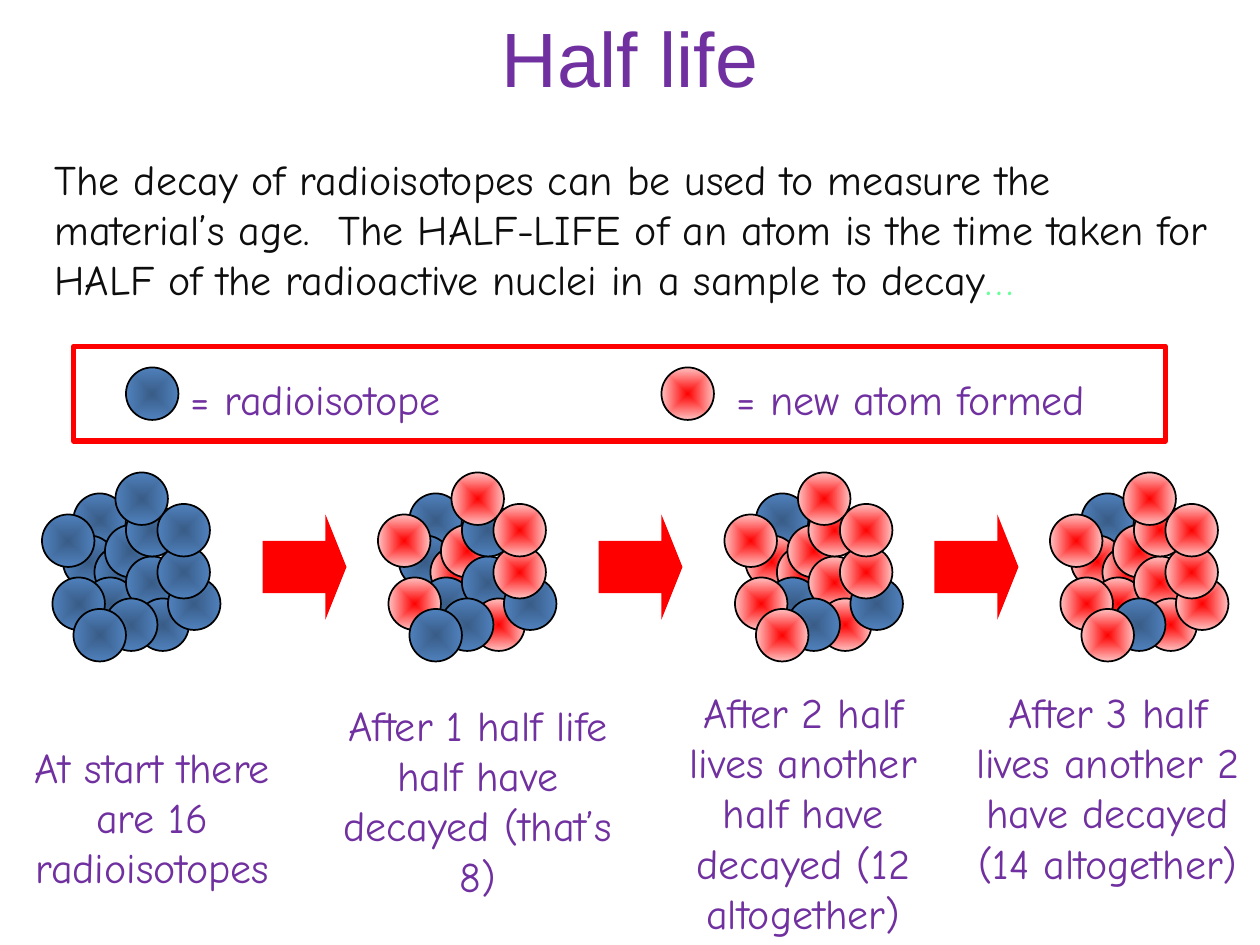
from pptx import Presentation
from pptx.dml.color import RGBColor
from pptx.enum.shapes import MSO_SHAPE
from pptx.enum.text import MSO_ANCHOR, MSO_AUTO_SIZE, PP_ALIGN
from pptx.oxml import parse_xml
from pptx.oxml.ns import nsdecls, qn
from pptx.util import Emu, Pt

PX = 9525  # EMU in one px, 96 px to the inch
PURPLE, RED, BLACK = "7030A0", "FF0000", "000000"
OLD = ("395C87", "4F81BD")  # centre, rim
NEW = (RED, "FFC1C1")
HAND = "Comic Neue"

INTRO = [
    ("The decay of radioisotopes can be used to measure the material’s age.  "
     "The HALF-LIFE of an atom is the time taken for HALF of the radioactive "
     "nuclei in a sample to decay", "0D0D0D"),
    ("…", "66FF99"),
]

# Atom places inside a nucleus, in grid steps, from back to front
STEP, ATOM, TOP = 8, 40, 360
SPOTS = [(3, 2), (2, 6), (5, 7), (6, 5), (4, 10), (0, 4), (1, 10), (8, 8),
         (9, 12), (12, 10), (8, 3), (11, 7), (6, 12), (11, 3), (7, 0), (3, 13)]

# Nucleus left, spots not yet decayed, caption, caption left, top, height
STAGES = [
    (32, set(range(16)), "At start there are 16 radioisotopes", 0, 560, 126),
    (288, {0, 1, 4, 7, 9, 10, 12, 15},
     "After 1 half life half have decayed (that’s 8)", 248, 528, 165),
    (552, {0, 4, 9, 12},
     "After 2 half lives another half have decayed (12 altogether)", 496, 518, 204),
    (800, {0, 12},
     "After 3 half lives another 2 have decayed (14 altogether)", 728, 518, 204),
]

# Atom left, colours, label, label left, label width
LEGEND = [
    (96, OLD, "= radioisotope", 136, 336),
    (504, NEW, "= new atom formed", 552, 376),
]


def color(code):
    return RGBColor.from_string(code)


def place(*box):
    return [Emu(v * PX) for v in box]


def add_text(shapes, box, runs, font=HAND, size=24, align=PP_ALIGN.LEFT,
             anchor=MSO_ANCHOR.TOP):
    frame = shapes.add_textbox(*place(*box)).text_frame
    frame.word_wrap = True
    frame.auto_size = MSO_AUTO_SIZE.NONE
    frame.vertical_anchor = anchor
    para = frame.paragraphs[0]
    para.alignment = align
    for words, code in runs:
        run = para.add_run()
        run.text = words
        run.font.name = font
        run.font.size = Pt(size)
        run.font.color.rgb = color(code)


def add_shape(shapes, kind, box, line=None, width=1):
    shape = shapes.add_shape(kind, *place(*box))
    shape.shadow.inherit = False
    if line:
        shape.line.color.rgb = color(line)
        shape.line.width = Pt(width)
    else:
        shape.line.fill.background()
    return shape


def add_atom(shapes, left, top, tones):
    """Draw a ball whose gradient runs from its centre to its rim."""
    atom = add_shape(shapes, MSO_SHAPE.OVAL, (left, top, ATOM, ATOM), BLACK)
    atom.fill.gradient()
    for stop, tone in zip(atom.fill.gradient_stops, tones):
        stop.color.rgb = color(tone)
    grad = atom._element.spPr.find(qn("a:gradFill"))
    grad.replace(grad.find(qn("a:lin")), parse_xml(
        f'<a:path {nsdecls("a")} path="shape">'
        '<a:fillToRect l="50000" t="50000" r="50000" b="50000"/></a:path>'))


def add_nucleus(shapes, left, intact):
    group = shapes.add_group_shape().shapes
    for i, (col, row) in enumerate(SPOTS):
        add_atom(group, left + col * STEP, TOP + row * STEP,
                 OLD if i in intact else NEW)


def add_legend(shapes):
    group = shapes.add_group_shape().shapes
    for left, tones, label, start, width in LEGEND:
        add_atom(group, left, 280, tones)
        add_text(group, (start, 280, width, 48), [(label, PURPLE)])
    frame = add_shape(group, MSO_SHAPE.RECTANGLE, (56, 264, 832, 72), RED, 3)
    frame.fill.background()


def main():
    deck = Presentation()
    deck.slide_width, deck.slide_height = place(960, 720)
    shapes = deck.slides.add_slide(deck.slide_layouts[6]).shapes

    add_text(shapes, (0, 0, 960, 87), [("Half life", PURPLE)], "Arial", 44,
             PP_ALIGN.CENTER, MSO_ANCHOR.MIDDLE)
    add_text(shapes, (32, 112, 904, 165), INTRO)

    for i, (left, intact, words, start, top, height) in enumerate(STAGES):
        add_nucleus(shapes, left, intact)
        add_text(shapes, (start, top, 232, height), [(words, PURPLE)],
                 align=PP_ALIGN.CENTER)
        if i:
            arrow = add_shape(shapes, MSO_SHAPE.RIGHT_ARROW,
                              (256 * i - 56, 392, 64, 80))
            arrow.adjustments[0] = 0.5
            arrow.adjustments[1] = 0.25
            arrow.fill.solid()
            arrow.fill.fore_color.rgb = color(RED)

    add_legend(shapes)
    deck.save("out.pptx")


if __name__ == "__main__":
    main()
